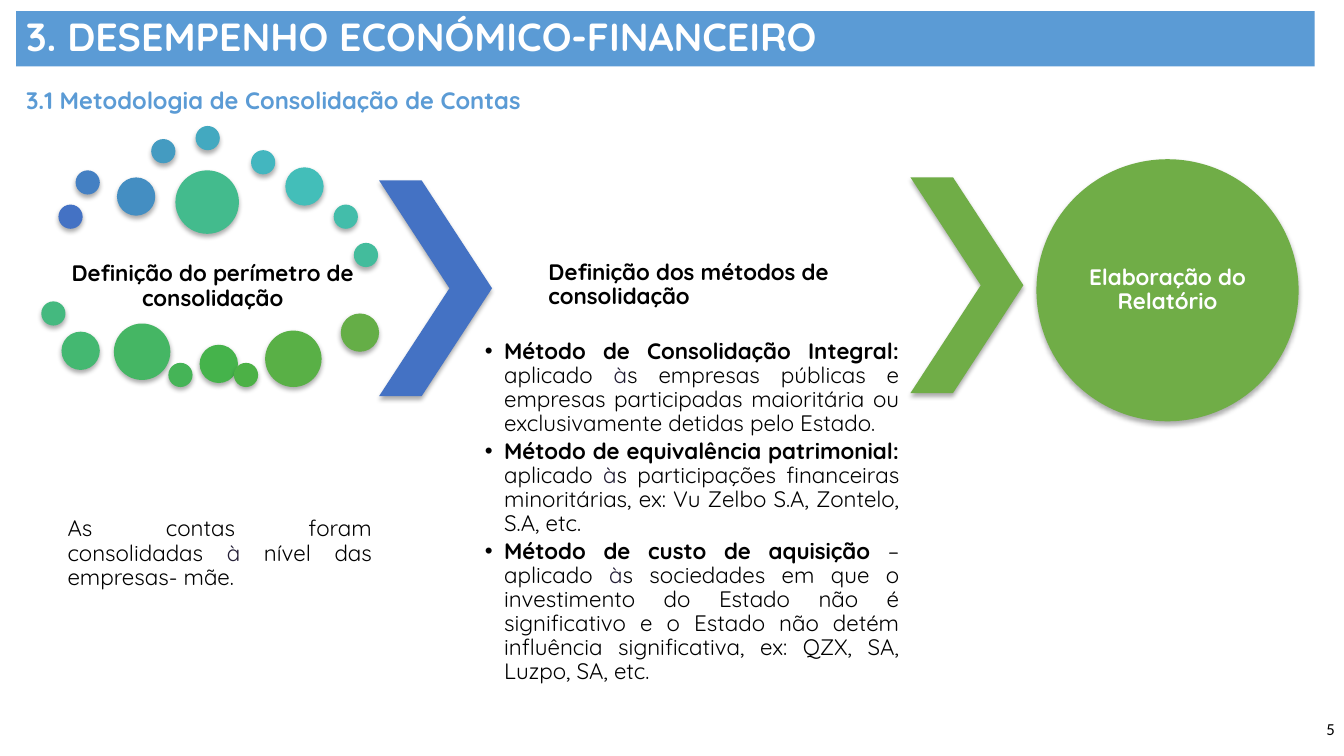
"""Builds the slide on the methodology for consolidating accounts."""
from lxml import etree
from pptx import Presentation
from pptx.dml.color import RGBColor
from pptx.enum.shapes import MSO_SHAPE
from pptx.enum.text import MSO_ANCHOR, MSO_AUTO_SIZE, PP_ALIGN
from pptx.oxml.ns import qn
from pptx.util import Inches, Pt

OVAL, CHEVRON = MSO_SHAPE.OVAL, MSO_SHAPE.CHEVRON
TOP, MIDDLE = MSO_ANCHOR.TOP, MSO_ANCHOR.MIDDLE
LEFT, CENTER, RIGHT, JUSTIFY = PP_ALIGN.LEFT, PP_ALIGN.CENTER, PP_ALIGN.RIGHT, PP_ALIGN.JUSTIFY

FONT = "Quicksand"
BLACK, WHITE, ACCENT, INK = "000000", "FFFFFF", "5B9BD5", "231E36"
BLUE, GREEN = "4472C4", "70AD47"

TITLE = "3. DESEMPENHO ECONÓMICO-FINANCEIRO"
SUBTITLE = "3.1 Metodologia de Consolidação de Contas"
PERIMETER = "Definição do perímetro de consolidação"
METHODS = "Definição dos métodos de consolidação"
REPORT = "Elaboração do Relatório"
PAGE = "5"
ACCOUNTS = [("As contas foram consolidadas ", {}), ("à", {"color": INK}),
            (" nível das empresas- mãe.", {})]
METHOD_LIST = [
    ("Método de Consolidação Integral:", " aplicado ",
     "s empresas públicas e empresas participadas maioritária ou "
     "exclusivamente detidas pelo Estado."),
    ("Método de equivalência patrimonial:", " aplicado ",
     "s participações financeiras minoritárias, ex: Vu Zelbo S.A, Zontelo, S.A, etc."),
    ("Método de custo de aquisição", " – aplicado ",
     "s sociedades em que o investimento do Estado não é significativo e o Estado "
     "não detém influência significativa, ex: QZX, SA, Luzpo, SA, etc."),
]
SMALL, MEDIUM, LARGE, HUGE = 0.24, 0.38, 0.56, 0.63
BUBBLES = [
    (0.58, 2.03, SMALL, "4472C4"), (0.75, 1.69, SMALL, "4480C3"),
    (1.16, 1.76, MEDIUM, "448EC2"), (1.5, 1.38, SMALL, "449BC1"),
    (1.94, 1.25, SMALL, "43A9C0"), (2.49, 1.49, SMALL, "43B6BF"),
    (2.83, 1.66, MEDIUM, "43BEB9"), (3.31, 2.03, SMALL, "43BDAA"),
    (3.51, 2.41, SMALL, "43BC9C"), (1.74, 1.69, HUGE, "43BB8D"),
    (0.41, 2.99, SMALL, "44B97F"), (0.61, 3.29, MEDIUM, "44B871"),
    (1.13, 3.21, LARGE, "45B664"), (1.67, 3.6, SMALL, "45B457"),
    (1.98, 3.42, MEDIUM, "45B34B"), (2.32, 3.6, SMALL, "4CB146"),
    (2.63, 3.28, LARGE, "59B046"), (3.38, 3.11, MEDIUM, "65AE47"),
]
CHEVRONS = [(3.76, 1.79, BLUE), (9.03, 1.76, GREEN)]


def rgb(value):
    return RGBColor.from_string(value)


def place(sp, left, top, width, height):
    sp.left, sp.top, sp.width, sp.height = map(Inches, (left, top, width, height))
    return sp


def add_runs(p, text, size=16, color=BLACK, bold=False, font=FONT):
    runs = [(text, {})] if isinstance(text, str) else text
    for part, changes in runs:
        r = p.add_run()
        r.text = part
        r.font.name, r.font.size = font, Pt(size)
        r.font.bold = changes.get("bold", bold)
        r.font.color.rgb = rgb(changes.get("color", color))


def write(sp, paragraphs, align=LEFT, anchor=MIDDLE, inset=0.02, inset_y=None,
          spacing=0.9, before=0, after=0, wrap=True, **fmt):
    tf = sp.text_frame
    tf.auto_size, tf.word_wrap, tf.vertical_anchor = MSO_AUTO_SIZE.NONE, wrap, anchor
    tf.margin_left = tf.margin_right = Inches(inset)
    tf.margin_top = tf.margin_bottom = Inches(inset if inset_y is None else inset_y)
    for i, text in enumerate(paragraphs):
        p = tf.add_paragraph() if i else tf.paragraphs[0]
        p.alignment, p.line_spacing = align, spacing
        p.space_before, p.space_after = Pt(before), Pt(after)
        add_runs(p, text, **fmt)


def add_text(s, box, text, **fmt):
    sp = s.shapes.add_textbox(*map(Inches, box))
    write(sp, [text], **fmt)


def add_shadow(sp):
    effects = etree.SubElement(sp._element.spPr, qn("a:effectLst"))
    shadow = etree.SubElement(effects, qn("a:outerShdw"), blurRad=str(Pt(3.5)),
                              dist=str(Pt(2.2)), dir="5400000", rotWithShape="0")
    color = etree.SubElement(shadow, qn("a:srgbClr"), val=BLACK)
    etree.SubElement(color, qn("a:alpha"), val="32000")


def add_figure(s, kind, box, color):
    sp = s.shapes.add_shape(kind, *map(Inches, box))
    sp.fill.solid()
    sp.fill.fore_color.rgb = rgb(color)
    sp.line.fill.background()
    add_shadow(sp)
    return sp


def add_bullets(sp):
    for p in sp.text_frame.paragraphs:
        pPr = p._p.get_or_add_pPr()
        pPr.set("marL", str(Inches(0.19)))
        pPr.set("indent", str(-Inches(0.19)))
        etree.SubElement(pPr, qn("a:buChar"), char="•")


def main():
    prs = Presentation()
    prs.slide_width, prs.slide_height = Inches(13.33), Inches(7.5)
    s = prs.slides.add_slide(prs.slide_layouts[1])

    title = place(s.shapes.title, 0.16, 0.11, 12.88, 0.55)
    title.fill.solid()
    title.fill.fore_color.rgb = rgb(ACCENT)
    write(title, [TITLE], align=JUSTIFY, inset=0.1, inset_y=0.05,
          size=28, color=WHITE, bold=True)
    add_text(s, (0.16, 0.66, 5.5, 0.53), SUBTITLE, anchor=TOP, inset=0.1, inset_y=0.05,
             spacing=1.5, before=12, wrap=False, size=17, color=ACCENT, bold=True)

    for left, top, size, color in BUBBLES:
        add_figure(s, OVAL, (left, top, size, size), color)
    for left, top, color in CHEVRONS:
        chevron = add_figure(s, CHEVRON, (left, top, 1.12, 2.14), color)
        chevron.adjustments[0] = 0.623

    add_text(s, (0.58, 2.34, 3.06, 1.01), PERIMETER, align=CENTER, after=5.6, bold=True)
    add_text(s, (0.65, 4.55, 3.06, 1.89), ACCOUNTS, align=JUSTIFY, after=5.6)
    add_text(s, (5.42, 1.76, 3.06, 2.14), METHODS, after=5.6, bold=True)

    methods = place(s.placeholders[1], 4.79, 3.35, 4.15, 1.89)
    items = [[(name, {"bold": True}), (link, {}), ("à", {"color": INK}), (rest, {})]
             for name, link, rest in METHOD_LIST]
    write(methods, items, align=JUSTIFY, anchor=TOP, after=2.4)
    add_bullets(methods)

    report = add_figure(s, OVAL, (10.28, 1.58, 2.6, 2.6), GREEN)
    write(report, [REPORT], align=CENTER, inset=0, after=5.6, color=WHITE, bold=True)

    add_text(s, (12.88, 6.97, 0.46, 0.53), PAGE, align=RIGHT, inset=0.1, inset_y=0.05,
             spacing=1.0, size=12, font="Calibri")
    prs.save("out.pptx")


if __name__ == "__main__":
    main()
